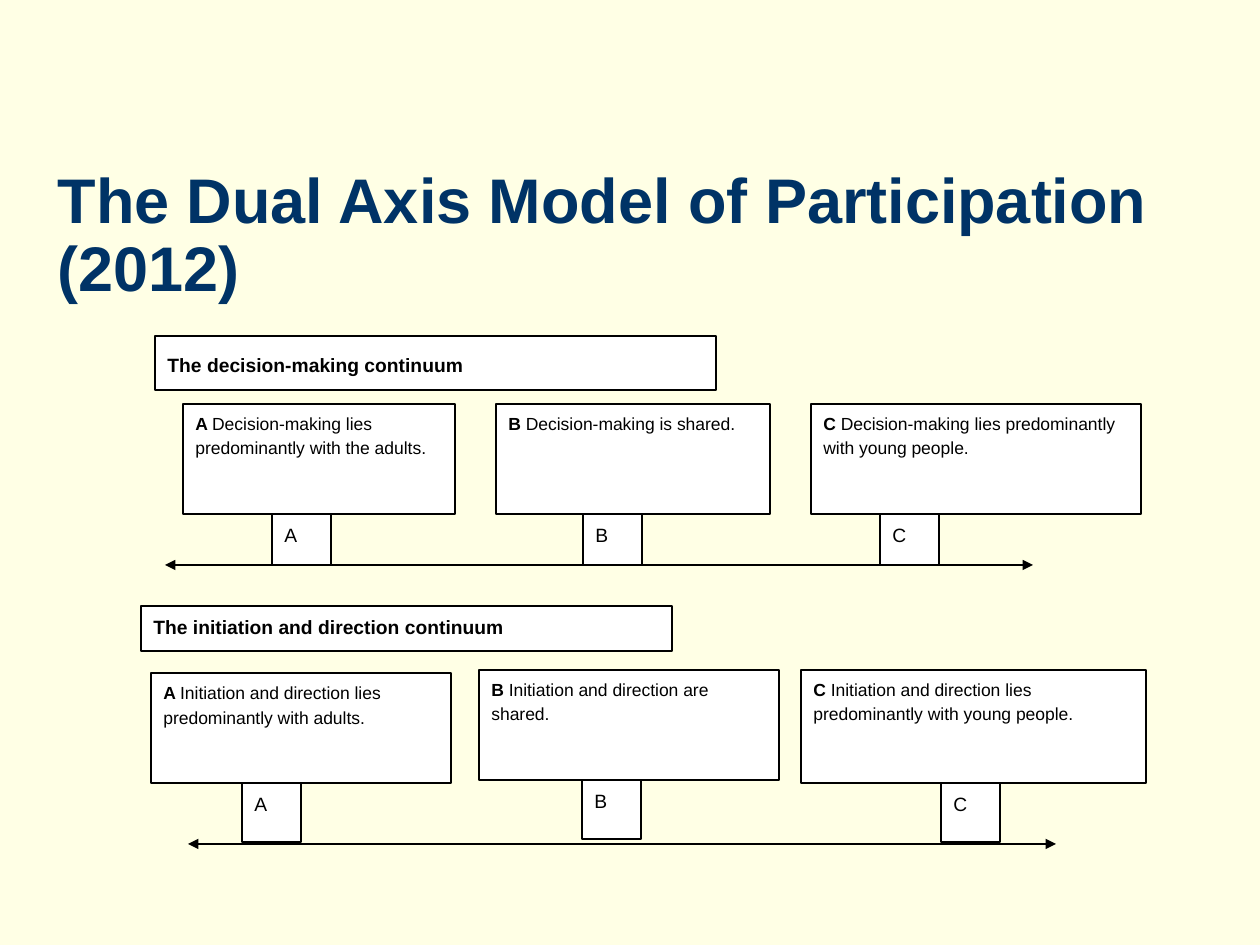
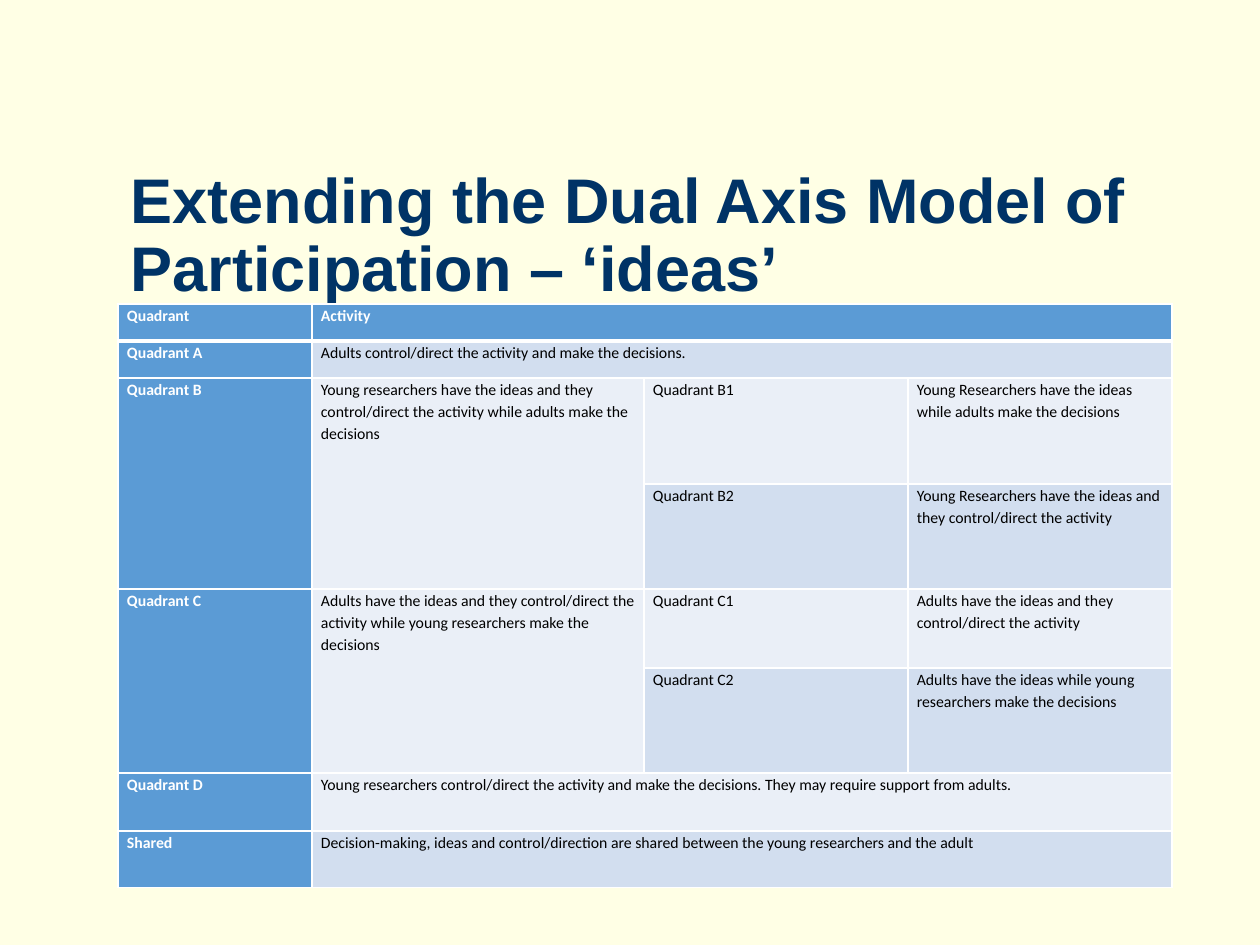
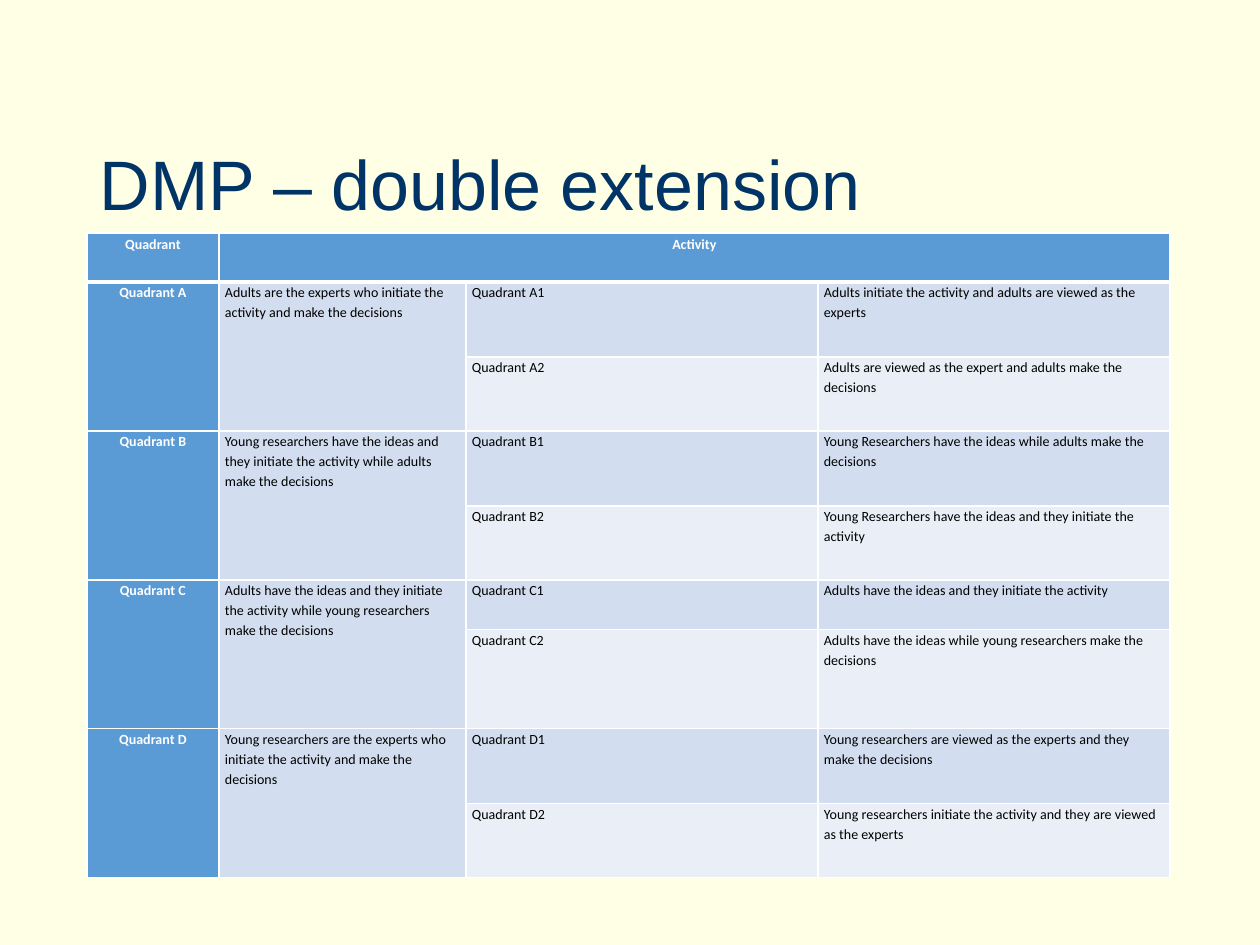
from dataclasses import dataclass

from lxml import etree
from pptx import Presentation
from pptx import util as u
from pptx.dml.color import RGBColor
from pptx.enum import shapes, text
from pptx.oxml import ns

EMU_PER_PX = 914400 / 126


@dataclass(frozen=True)
class Theme:
    background: str = "FFFFE5"
    title: str = "003366"
    ink: str = "000000"
    paper: str = "FFFFFF"
    header: str = "5B9BD5"
    band_dark: str = "D2DEEF"
    band_light: str = "EAEFF7"
    heading_font: str = "Arial"
    table_font: str = "Calibri"
    heading_size: int = 36
    large_heading_size: int = 40
    statement_size: int = 10
    label_size: int = 11
    box_line: float = 0.75
    axis_line: float = 1.5
    grid_line: int = 1
    header_rule: int = 3
    line_spacing: float = 1.15


THEME = Theme()


def px(length):
    return u.Emu(round(length * EMU_PER_PX))


def rgb(value):
    return RGBColor.from_string(value)


def format_text(item, size, color=THEME.ink, bold=False, font=THEME.heading_font):
    """Format a run or the default font of a paragraph."""
    item.font.name = font
    item.font.size = u.Pt(size)
    item.font.bold = bold
    item.font.color.rgb = rgb(color)


def add_titled_slide(prs, title, left, top, width, size=THEME.heading_size, bold=True):
    slide = prs.slides.add_slide(prs.slide_layouts[5])
    heading = slide.shapes.title
    heading.left, heading.top = px(left), px(top)
    heading.width, heading.height = px(width), px(132)
    frame = heading.text_frame
    frame.text = title
    frame.word_wrap = True
    frame.auto_size = text.MSO_AUTO_SIZE.NONE
    frame.vertical_anchor = text.MSO_ANCHOR.MIDDLE
    paragraph = frame.paragraphs[0]
    paragraph.alignment = text.PP_ALIGN.LEFT
    paragraph.line_spacing = 0.9
    format_text(paragraph.runs[0], size, THEME.title, bold)
    return slide


def add_box(slide, bounds, parts, size, line_spacing=THEME.line_spacing):
    """Draw a white box; parts are (words, bold) pairs on one paragraph."""
    box = slide.shapes.add_shape(shapes.MSO_SHAPE.RECTANGLE, *map(px, bounds))
    box.shadow.inherit = False
    box.fill.solid()
    box.fill.fore_color.rgb = rgb(THEME.paper)
    box.line.color.rgb = rgb(THEME.ink)
    box.line.width = u.Pt(THEME.box_line)
    frame = box.text_frame
    frame.word_wrap = True
    frame.vertical_anchor = text.MSO_ANCHOR.TOP
    paragraph = frame.paragraphs[0]
    paragraph.alignment = text.PP_ALIGN.LEFT
    paragraph.line_spacing = line_spacing
    for words, bold in parts:
        run = paragraph.add_run()
        run.text = words
        format_text(run, size, bold=bold)


def add_axis(slide, left, right, y):
    axis = slide.shapes.add_connector(
        shapes.MSO_CONNECTOR.STRAIGHT, px(left), px(y), px(right), px(y))
    axis.line.color.rgb = rgb(THEME.ink)
    axis.line.width = u.Pt(THEME.axis_line)
    line = axis.line._get_or_add_ln()
    for end in ("a:headEnd", "a:tailEnd"):
        etree.SubElement(line, ns.qn(end), type="triangle")
    etree.SubElement(axis._element.spPr, ns.qn("a:effectLst"))


def add_continuum(slide, name, name_bounds, name_spacing, stages, marker_height, axis):
    """Draw a named axis; each stage is (letter, statement, bounds, marker left)."""
    add_axis(slide, *axis)
    add_box(slide, name_bounds, [(name, True)], THEME.label_size, name_spacing)
    for letter, statement, bounds, marker_left in stages:
        add_box(slide, bounds, [(letter + " ", True), (statement, False)],
                THEME.statement_size)
        bottom = bounds[1] + bounds[3]
        add_box(slide, (marker_left, bottom, 59, marker_height), [(letter, False)],
                THEME.label_size)


def set_cell_borders(cell, row):
    properties = cell._tc.get_or_add_tcPr()
    for side in "LRTB":
        beside_header = (row, side) in ((0, "B"), (1, "T"))
        weight = THEME.header_rule if beside_header else THEME.grid_line
        border = etree.SubElement(properties, ns.qn(f"a:ln{side}"), w=str(u.Pt(weight)))
        fill = etree.SubElement(border, ns.qn("a:solidFill"))
        etree.SubElement(fill, ns.qn("a:srgbClr"), val=THEME.paper)


def format_cell(cell, row, column, size, inset, label_alignment):
    is_label = row == 0 or column == 0
    band = THEME.band_dark if row % 2 else THEME.band_light
    set_cell_borders(cell, row)
    cell.fill.solid()
    cell.fill.fore_color.rgb = rgb(THEME.header if is_label else band)
    cell.margin_left = cell.margin_right = px(inset)
    cell.margin_top = cell.margin_bottom = 0
    paragraph = cell.text_frame.paragraphs[0]
    paragraph.line_spacing = THEME.line_spacing
    paragraph.alignment = label_alignment if is_label else text.PP_ALIGN.LEFT
    for item in (paragraph, *paragraph.runs):
        format_text(item, size, THEME.paper if is_label else THEME.ink, is_label,
                    THEME.table_font)


def add_quadrant_table(slide, left, top, widths, heights, quadrants, size, inset,
                       label_alignment=text.PP_ALIGN.LEFT):
    """Each quadrant is (label, activity, parts); parts share its rows."""
    table = slide.shapes.add_table(
        len(heights), len(widths), px(left), px(top),
        px(sum(widths)), px(sum(heights))).table
    for column, width in zip(table.columns, widths):
        column.width = px(width)
    for table_row, height in zip(table.rows, heights):
        table_row.height = px(height)

    row = 0
    for label, activity, parts in [("Quadrant", "Activity", ()), *quadrants]:
        table.cell(row, 0).text = label
        table.cell(row, 1).text = activity
        for offset, part in enumerate(parts):
            for column, words in enumerate(part, start=2):
                table.cell(row + offset, column).text = words
        if parts:
            last = row + len(parts) - 1
            for column in (0, 1):
                table.cell(row, column).merge(table.cell(last, column))
        else:
            table.cell(row, 1).merge(table.cell(row, 3))
        row += max(len(parts), 1)

    for row in range(len(heights)):
        for column in range(len(widths)):
            format_cell(table.cell(row, column), row, column, size, inset,
                        label_alignment)


def add_model_slide(prs):
    slide = add_titled_slide(
        prs, "The Dual Axis Model of Participation (2012)", 45, 171, 1128)
    add_continuum(
        slide, "The decision-making continuum", (155, 336, 561, 54), 1.5,
        [("A", "Decision-making lies predominantly with the adults.",
          (183, 404, 272, 110), 272),
         ("B", "Decision-making is shared.", (496, 404, 274, 110), 583),
         ("C", "Decision-making lies predominantly with young people.",
          (811, 404, 330, 110), 880)],
        51, (165, 1033, 565))
    add_continuum(
        slide, "The initiation and direction continuum", (141, 606, 531, 45),
        THEME.line_spacing,
        [("A", "Initiation and direction lies predominantly with adults.",
          (151, 673, 300, 110), 242),
         ("B", "Initiation and direction are shared.", (479, 670, 300, 110), 582),
         ("C", "Initiation and direction lies predominantly with young people.",
          (801, 670, 345, 113), 941)],
        59, (188, 1056, 844))


def add_ideas_slide(prs):
    slide = add_titled_slide(
        prs, "Extending the Dual Axis Model of Participation – ‘ideas’", 118, 171, 1056)
    quadrants = [
        ("Quadrant A", "Adults control/direct the activity and make the decisions.", ()),
        ("Quadrant B",
         "Young researchers have the ideas and they control/direct the activity "
         "while adults make the decisions",
         [("Quadrant B1",
           "Young Researchers have the ideas while adults make the decisions"),
          ("Quadrant B2",
           "Young Researchers have the ideas and they control/direct the activity")]),
        ("Quadrant C",
         "Adults have the ideas and they control/direct the activity "
         "while young researchers make the decisions",
         [("Quadrant C1", "Adults have the ideas and they control/direct the activity"),
          ("Quadrant C2",
           "Adults have the ideas while young researchers make the decisions")]),
        ("Quadrant D",
         "Young researchers control/direct the activity and make the decisions. "
         "They may require support from adults.", ()),
        ("Shared",
         "Decision-making, ideas and control/direction are shared between "
         "the young researchers and the adult", ()),
    ]
    add_quadrant_table(slide, 118, 304, [194, 332, 264, 264],
                       [37, 37, 106, 105, 79, 105, 58, 57], quadrants, 9, 9)


def add_double_extension_slide(prs):
    slide = add_titled_slide(prs, "DMP – double extension", 87, 122, 1056,
                             THEME.large_heading_size, bold=False)
    quadrants = [
        ("Quadrant A",
         "Adults are the experts who initiate the activity and make the decisions",
         [("Quadrant A1",
           "Adults initiate the activity and adults are viewed as the experts"),
          ("Quadrant A2",
           "Adults are viewed as the expert and adults make the decisions")]),
        ("Quadrant B",
         "Young researchers have the ideas and they initiate the activity "
         "while adults make the decisions",
         [("Quadrant B1",
           "Young Researchers have the ideas while adults make the decisions"),
          ("Quadrant B2",
           "Young Researchers have the ideas and they initiate the activity")]),
        ("Quadrant C",
         "Adults have the ideas and they initiate the activity "
         "while young researchers make the decisions",
         [("Quadrant C1", "Adults have the ideas and they initiate the activity"),
          ("Quadrant C2",
           "Adults have the ideas while young researchers make the decisions")]),
        ("Quadrant D",
         "Young researchers are the experts who initiate the activity "
         "and make the decisions",
         [("Quadrant D1",
           "Young researchers are viewed as the experts and they make the decisions"),
          ("Quadrant D2",
           "Young researchers initiate the activity and they are viewed "
           "as the experts")]),
    ]
    add_quadrant_table(slide, 87, 233, [132, 247, 352, 352],
                       [49, 75, 74, 75, 74, 50, 99, 75, 74], quadrants, 8, 6,
                       text.PP_ALIGN.CENTER)


def main():
    prs = Presentation()
    prs.slide_width, prs.slide_height = px(1260), px(945)
    background = prs.slide_master.background.fill
    background.solid()
    background.fore_color.rgb = rgb(THEME.background)
    add_model_slide(prs)
    add_ideas_slide(prs)
    add_double_extension_slide(prs)
    prs.save("out.pptx")


if __name__ == "__main__":
    main()
